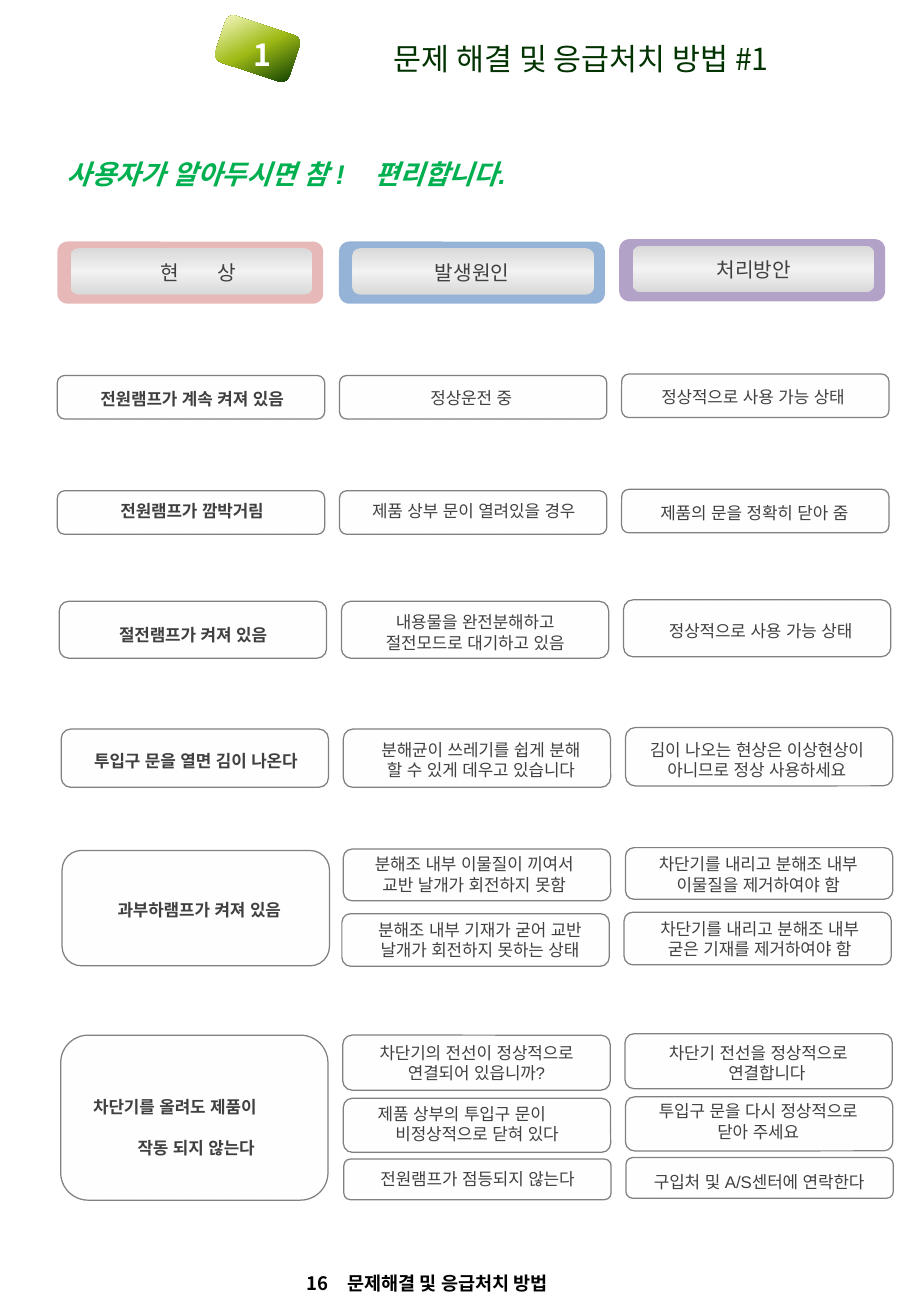
from lxml.etree import SubElement
from pptx import Presentation
from pptx.dml.color import RGBColor
from pptx.enum.shapes import MSO_SHAPE as Kind
from pptx.enum.text import MSO_ANCHOR as Anchor, MSO_AUTO_SIZE as Auto, PP_ALIGN as Align
from pptx.oxml import parse_xml
from pptx.oxml.ns import nsdecls, qn
from pptx.util import Cm, Pt

NOTO = "Noto Sans CJK KR"
GRAY = "404040"
STEP = 5.9
WIDE = 5.59
SILVER = [(0, "D9D9D9", 100), (50, "F2F2F2", 100), (100, "D9D9D9", 100)]
GLASS = [(0, "FFFFFF", 100), (100, "FFFFFF", 50)]
GREEN = [(0, "003300", 100), (51, "9FBB15", 100), (100, "FFFFD5", 100)]

HEADS = [
    (1.2, 5.05, "E6B9B8", "현 상", 1.93, 10),
    (7.09, 5.05, "95B3D7", "발생원인", 7.65, 0),
    (12.95, 5.0, "B3A2C7", "처리방안", 13.54, 0),
]

ROWS = [
    (1.2, 7.85, 0.91, [
        (0, 1.22, 8.0, "전원램프가 계속 켜져 있음", {}),
        (1, 7.06, 7.98, "정상운전 중", {}),
        (2, 12.95, 7.95, "정상적으로 사용 가능 상태", {})]),
    (1.2, 10.26, 0.91, [
        (0, 1.22, 10.34, "전원램프가 깜박거림", {}),
        (1, 7.11, 10.34, "제품 상부 문이 열려있을 경우", {}),
        (2, 12.98, 10.39, "제품의 문을 정확히 닫아 줌", {})]),
    (1.24, 12.57, 1.19, [
        (0, 1.24, 12.93, "절전램프가 켜져 있음", {}),
        (1, 7.14, 12.67, "내용물을 완전분해하고\n절전모드로 대기하고 있음", {"gap": 1.0}),
        (2, 13.11, 12.85, "정상적으로 사용 가능 상태", {})]),
    (1.28, 15.24, 1.22, [
        (0, 1.3, 15.57, "투입구 문을 열면 김이 나온다", {}),
        (1, 7.26, 15.34, "분해균이 쓰레기를 쉽게 분해\n할 수 있게 데우고 있습니다", {}),
        (2, 13.03, 15.34, "김이 나오는 현상은 이상현상이\n아니므로 정상 사용하세요", {})]),
    (1.3, 17.78, 2.41, [
        (0, 1.37, 18.69, "과부하램프가 켜져 있음", {})]),
    (1.28, 17.75, 1.08, [
        (1, 7.12, 17.73, "분해조 내부 이물질이 끼여서\n교반 날개가 회전하지 못함", {"gap": 1.0}),
        (2, 13.06, 17.73, "차단기를 내리고 분해조 내부\n이물질을 제거하여야 함", {"gap": 1.0})]),
    (1.25, 19.1, 1.1, [
        (1, 7.24, 19.1, "분해조 내부 기재가 굳어 교반 날개가 회전하지 못하는 상태", {"gap": 1.0}),
        (2, 13.09, 19.08, "차단기를 내리고 분해조 내부\n굳은 기재를 제거하여야 함", {"gap": 1.0})]),
    (1.27, 21.64, 3.45, [
        (0, 0.86, 22.38, "차단기를 올려도 제품이\n작동 되지 않는다", {"gap": 2.0, "push": 0.89})]),
    (1.27, 21.64, 1.15, [
        (1, 7.17, 21.67, "차단기의 전선이 정상적으로\n연결되어 있읍니까?", {"gap": 1.0}),
        (2, 13.06, 21.67, "차단기 전선을 정상적으로\n연결합니다", {"gap": 1.0, "push": 0.36})]),
    (1.28, 22.96, 1.13, [
        (1, 6.86, 22.94, "제품 상부의 투입구 문이\n비정상적으로 닫혀 있다", {"gap": 1.0, "push": 0.64}),
        (2, 13.06, 22.89, "투입구 문을 다시 정상적으로\n닫아 주세요", {"gap": 1.0})]),
    (1.29, 24.23, 0.85, [
        (1, 7.19, 24.1, "전원램프가 점등되지 않는다", {"gap": 1.5}),
        (2, 13.08, 24.16, "구입처 및 A/S센터에 연락한다", {"gap": 1.5})]),
]


def paint(tone):
    return RGBColor.from_string(tone)


def blend(shape, stops, angle):
    marks = "".join(
        f'<a:gs pos="{spot * 1000}"><a:srgbClr val="{tone}">'
        f'<a:alpha val="{alpha * 1000}"/></a:srgbClr></a:gs>'
        for spot, tone, alpha in stops)
    shape._element.spPr.insert(2, parse_xml(
        f'<a:gradFill {nsdecls("a")} rotWithShape="1"><a:gsLst>{marks}</a:gsLst>'
        f'<a:lin ang="{angle * 60000}" scaled="1"/></a:gradFill>'))


def panel(slide, x, y, w, h, fill=None, stops=None, angle=0, line=None, turn=0):
    shape = slide.shapes.add_shape(Kind.ROUNDED_RECTANGLE, Cm(x), Cm(y), Cm(w), Cm(h))
    shape.shadow.inherit = False
    shape.rotation = turn
    if stops:
        blend(shape, stops, angle)
    else:
        shape.fill.solid()
        shape.fill.fore_color.rgb = paint(fill)
    if line:
        shape.line.color.rgb = paint(line)
        shape.line.width = Pt(0.75)
    else:
        shape.line.fill.background()


def write(slide, text, x, y, w, h, size=10, font="Arial", tone=GRAY, bold=False,
          slant=False, align=Align.LEFT, gap=None, push=0, tab=0, space=0,
          wrap=True, grow=True, anchor=Anchor.TOP):
    frame = slide.shapes.add_textbox(Cm(x), Cm(y), Cm(w), Cm(h)).text_frame
    frame.word_wrap = wrap
    frame.auto_size = Auto.SHAPE_TO_FIT_TEXT if grow else Auto.NONE
    frame.vertical_anchor = anchor
    for i, words in enumerate(text.split("\n")):
        para = frame.add_paragraph() if i else frame.paragraphs[0]
        props = para._p.get_or_add_pPr()
        if tab:
            stops = SubElement(props, qn("a:tabLst"))
            SubElement(stops, qn("a:tab"), pos=str(Cm(tab)), algn="l")
        if i and push:
            props.set("marL", str(Cm(push)))
            props.set("indent", "0")
        para.alignment = align
        para.line_spacing = gap
        run = para.add_run()
        run.text = words
        run.font.size = Pt(size)
        run.font.name = font
        run.font.bold = bold
        run.font.italic = slant
        run.font.color.rgb = paint(tone)
        mark = run._r.get_or_add_rPr()
        SubElement(mark, qn("a:ea"), typeface=font)
        if space:
            mark.set("spc", str(space * 100))


def header(slide, x, y, fill, text, left, space):
    panel(slide, x, y, 5.56, 1.3, fill=fill)
    panel(slide, x + 0.28, y + 0.14, 5.05, 0.97, stops=SILVER, angle=90)
    write(slide, text, left, y + 0.26, 4.45, 0.66, size=12, font=NOTO,
          align=Align.CENTER, space=space)


def row(slide, left, top, high, cells):
    for col, x, y, text, form in cells:
        rise = 0.03 if col == 2 else 0
        panel(slide, left + STEP * col, top - rise, WIDE, high,
              stops=GLASS, angle=315, line="808080")
        write(slide, text, x, y, WIDE, 0.58, bold=col == 0,
              align=Align.CENTER, **{"gap": Pt(12), **form})


def main():
    deck = Presentation()
    deck.slide_width = Cm(19.05)
    deck.slide_height = Cm(27.51)
    slide = deck.slides.add_slide(deck.slide_layouts[6])
    write(slide, "문제 해결 및 응급처치 방법 #1", 5.26, 0, 13.79, 2.44, size=18, font=NOTO,
          tone="003300", align=Align.CENTER, grow=False, anchor=Anchor.MIDDLE)
    write(slide, "사용자가 알아두시면 참 !\t편리합니다.", 1.14, 3.43, 16.79, 0.71, size=16,
          tone="00B050", bold=True, slant=True, gap=Pt(12), tab=6.45)
    write(slide, "16\t문제해결 및 응급처치 방법", 6.17, 26.47, 9.04, 0.74, size=11,
          font=NOTO, tone="000000", bold=True, tab=0.84)
    for head in HEADS:
        header(slide, *head)
    for item in ROWS:
        row(slide, *item)
    panel(slide, 4.57, 0.51, 1.63, 1.02, stops=GREEN, angle=225, turn=18.3)
    write(slide, "1", 5.05, 0.64, 1.24, 1.02, size=18, font=NOTO, tone="FFFFFF",
          bold=True, wrap=False)
    deck.save("out.pptx")


if __name__ == "__main__":
    main()
